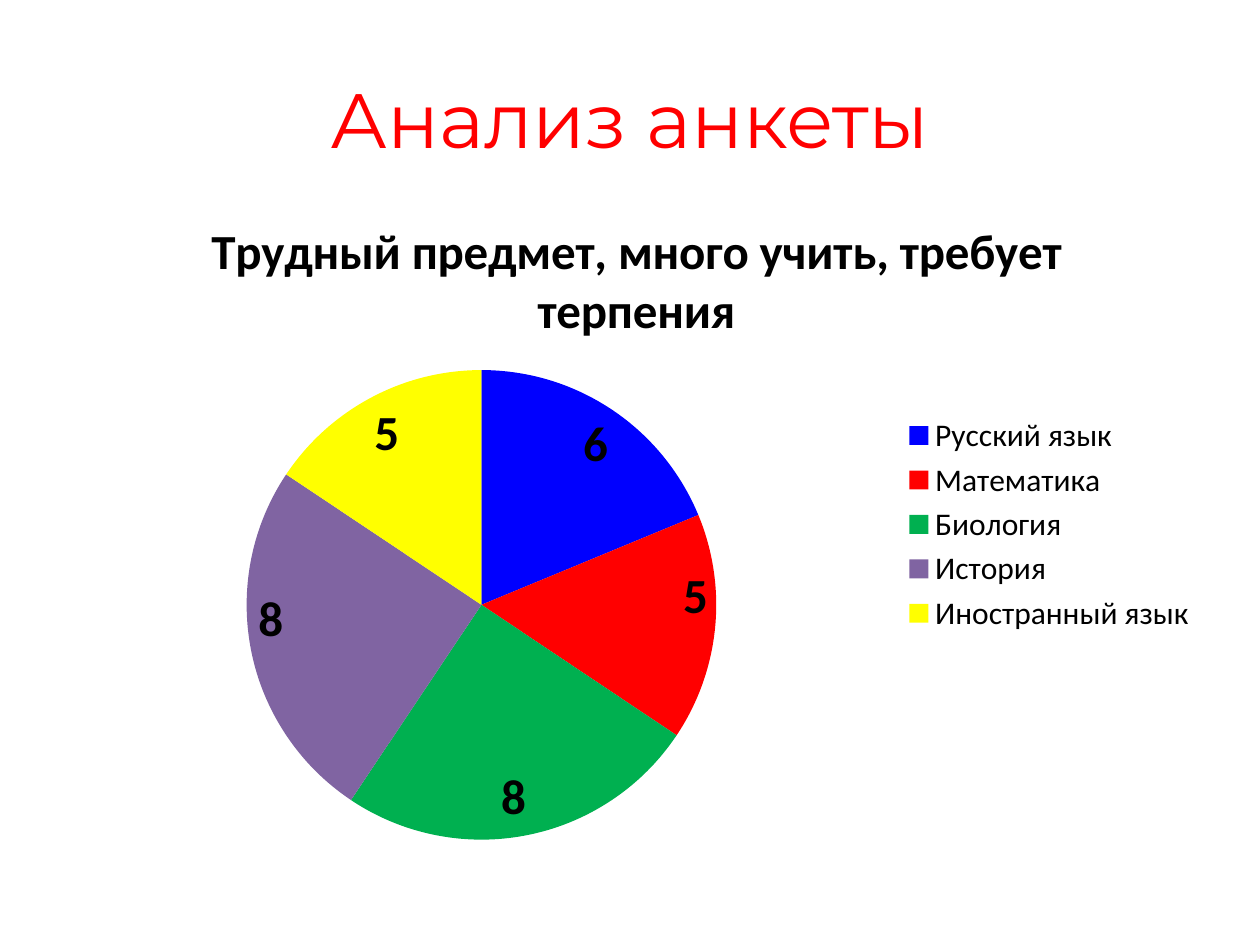
"""Build a survey slide with a heading and a pie chart."""
from lxml import etree
from pptx import Presentation, util as u
from pptx.chart.data import CategoryChartData
from pptx.dml.color import RGBColor
from pptx.enum import chart as charts, text
from pptx.oxml.ns import qn

WIDTH, HEIGHT = 10, 7.5
COLORS = {"heading": "FF0000", "ink": "000000"}
SUBJECTS = {
    "Русский язык": (6, "0000FF"),
    "Математика": (5, "FF0000"),
    "Биология": (8, "00B050"),
    "История": (8, "8064A2"),
    "Иностранный язык": (5, "FFFF00"),
}
QUESTION = "Трудный предмет, много учить, требует терпения"
HEADING_BOX = (0.05, 0.04, 0.9, 0.17)
CHART_BOX = (0.05, 0.2, 0.91, 0.71)
PIE_BOX = {"x": 0.16, "y": 0.27, "w": 0.41, "h": 0.7}


def place(box):
    """Turn shares of the slide into lengths."""
    return [u.Inches(share * side) for share, side in zip(box, (WIDTH, HEIGHT) * 2)]


def style(font, size, color=COLORS["ink"], name="Calibri", bold=False):
    """Set the face, size, weight and colour of a font."""
    font.name, font.size, font.bold = name, u.Pt(size), bold
    font.color.rgb = RGBColor.from_string(color)


def add_heading(page, box):
    """Add the centred heading."""
    frame = page.shapes.add_textbox(*place(box)).text_frame
    frame.word_wrap = True
    frame.vertical_anchor = text.MSO_ANCHOR.MIDDLE
    para = frame.paragraphs[0]
    para.alignment = text.PP_ALIGN.CENTER
    span = para.add_run()
    span.text = "Анализ анкеты"
    style(span.font, 44, COLORS["heading"], "Montserrat")


def set_plot_layout(chart, box):
    """Fix the inner plot area to shares of the chart."""
    area = chart.element.find(".//" + qn("c:plotArea"))
    for old in area.findall(qn("c:layout")):
        area.remove(old)
    layout = etree.Element(qn("c:layout"))
    manual = etree.SubElement(layout, qn("c:manualLayout"))
    settings = {"layoutTarget": "inner", "xMode": "edge", "yMode": "edge", **box}
    for tag, value in settings.items():
        etree.SubElement(manual, qn(f"c:{tag}")).set("val", str(value))
    area.insert(0, layout)


def add_pie(page, box):
    """Add the pie chart with its title, labels and legend."""
    data = CategoryChartData()
    data.categories = list(SUBJECTS)
    data.add_series(QUESTION, [votes for votes, _ in SUBJECTS.values()])
    chart = page.shapes.add_chart(charts.XL_CHART_TYPE.PIE, *place(box), data).chart
    style(chart.font, 18)

    span = chart.chart_title.text_frame.paragraphs[0].add_run()
    span.text = QUESTION
    style(span.font, 28, bold=True)
    chart.chart_title.include_in_layout = False

    chart.has_legend = True
    chart.legend.position = charts.XL_LEGEND_POSITION.RIGHT
    chart.legend.include_in_layout = False
    style(chart.legend.font, 18)

    plot = chart.plots[0]
    plot.vary_by_categories = True
    for index, (_, color) in enumerate(SUBJECTS.values()):
        fill = plot.series[0].points[index].format.fill
        fill.solid()
        fill.fore_color.rgb = RGBColor.from_string(color)
    plot.has_data_labels = True
    labels = plot.data_labels
    labels.show_value = True
    labels.show_percentage = False
    labels.position = charts.XL_LABEL_POSITION.INSIDE_END
    style(labels.font, 28, bold=True)
    set_plot_layout(chart, PIE_BOX)


def main():
    """Build and save the deck."""
    deck = Presentation()
    deck.slide_width, deck.slide_height = u.Inches(WIDTH), u.Inches(HEIGHT)
    page = deck.slides.add_slide(deck.slide_layouts[6])
    add_heading(page, HEADING_BOX)
    add_pie(page, CHART_BOX)
    deck.save("out.pptx")


if __name__ == "__main__":
    main()
